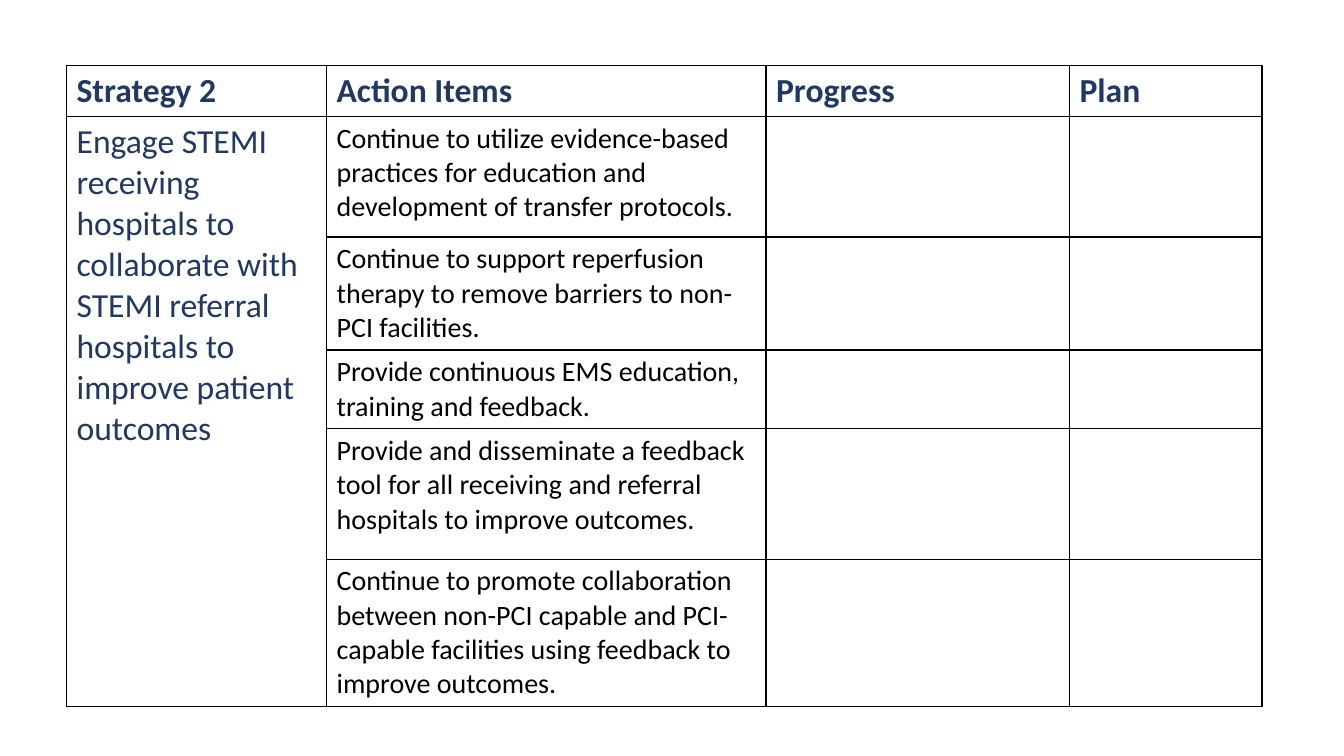
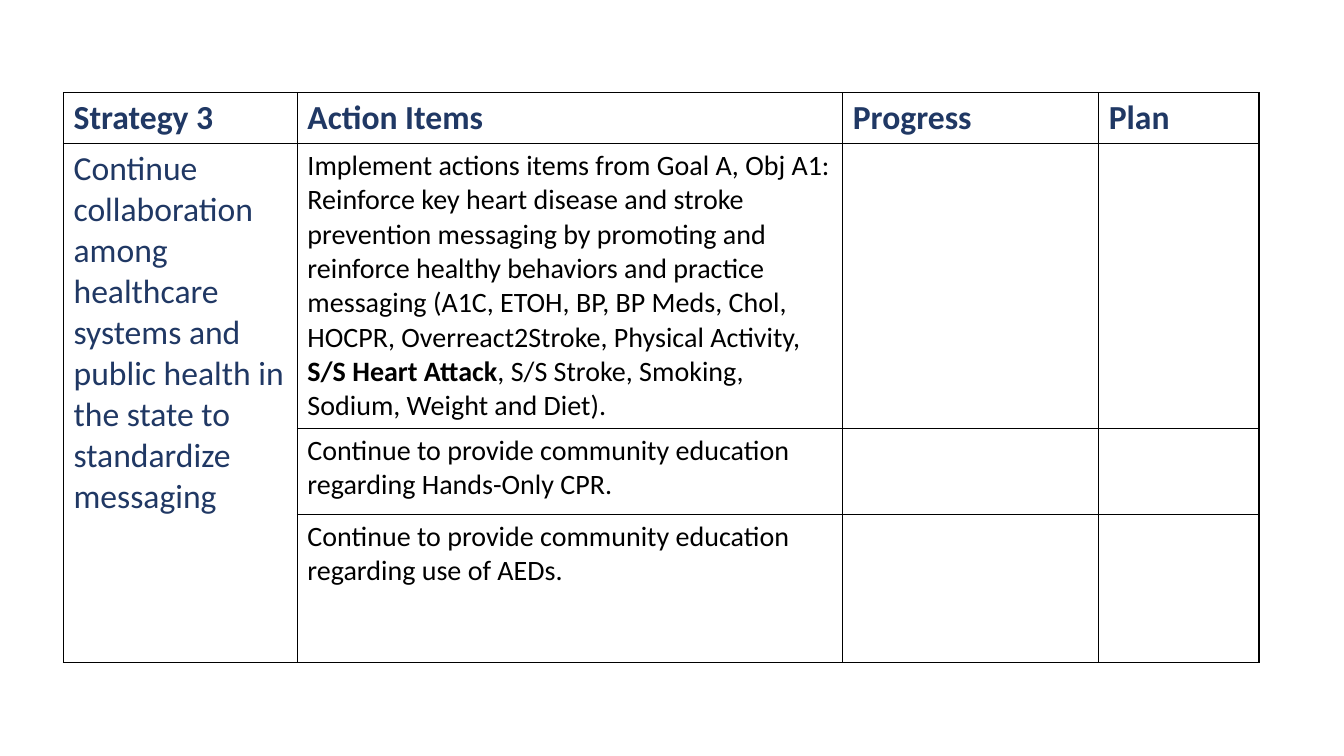
from dataclasses import dataclass

from lxml.etree import SubElement as Sub
from pptx import Presentation
from pptx.dml.color import RGBColor as Rgb
from pptx.oxml.ns import qn
from pptx.util import Inches, Pt

# Content: sizes are percent of the slide's width (left, cols) or height (top, rows)
HEADS = ["Action Items", "Progress", "Plan"]
PLANS = [
    {
        "head": "Strategy 2",
        "goal": "Engage STEMI receiving hospitals to collaborate with STEMI "
                "referral hospitals to improve patient outcomes",
        "left": 4.95, "top": 8.67,
        "cols": [19.35, 32.7, 22.58, 14.33],
        "rows": [6.75, 15.93, 14.95, 10.38, 17.26, 19.51],
        "items": [
            ["Continue to utilize evidence-based practices for education and "
             "development of transfer protocols."],
            ["Continue to support reperfusion therapy to remove barriers to "
             "non-PCI facilities."],
            ["Provide continuous EMS education, training and feedback."],
            ["Provide and disseminate a feedback tool for all receiving and "
             "referral hospitals to improve outcomes."],
            ["Continue to promote collaboration between non-PCI capable and "
             "PCI-capable facilities using feedback to improve outcomes."],
        ],
    },
    {
        "head": "Strategy 3",
        "goal": "Continue collaboration among healthcare systems and public "
                "health in the state to standardize messaging",
        "left": 4.73, "top": 12.27,
        "cols": [17.4, 40.58, 19.05, 11.93],
        "rows": [6.75, 37.63, 11.44, 19.51],
        # Every second run of an item is bold
        "items": [
            ["Implement actions items from Goal A, Obj A1: Reinforce key heart "
             "disease and stroke prevention messaging by promoting and "
             "reinforce healthy behaviors and practice messaging (A1C, ETOH, "
             "BP, BP Meds, Chol, HOCPR, Overreact2Stroke, Physical Activity, ",
             "S/S Heart Attack",
             ", S/S Stroke, Smoking, Sodium, Weight and Diet)."],
            ["Continue to provide community education regarding Hands-Only CPR."],
            ["Continue to provide community education regarding use of AEDs."],
        ],
    },
]


@dataclass(frozen=True)
class Theme:
    font: str = "Calibri"
    navy: str = "203864"
    black: str = "000000"
    white: str = "FFFFFF"
    large: int = 24
    small: int = 20
    rule: float = 1


THEME = Theme()


def write(cell, text, size=THEME.large, color=THEME.navy, bold=False):
    """Add one run of text to the cell."""
    run = cell.text_frame.paragraphs[0].add_run()
    run.text = text
    font = run.font
    font.name, font.size, font.bold = THEME.font, Pt(size), bold
    font.color.rgb = Rgb.from_string(color)


def frame(cell):
    """Rule all four sides of the cell and fill it."""
    props = cell._tc.get_or_add_tcPr()
    for side in ("lnL", "lnR", "lnT", "lnB"):
        line = Sub(props, qn(f"a:{side}"), w=str(Pt(THEME.rule)))
        fill = Sub(line, qn("a:solidFill"))
        Sub(fill, qn("a:srgbClr"), val=THEME.black)
    cell.fill.solid()
    cell.fill.fore_color.rgb = Rgb.from_string(THEME.white)


def build(deck, plan):
    """Add a slide that holds one strategy table."""
    def wide(share):
        return round(deck.slide_width * share / 100)

    def high(share):
        return round(deck.slide_height * share / 100)

    cols, rows = plan["cols"], plan["rows"]
    slide = deck.slides.add_slide(deck.slide_layouts[6])
    table = slide.shapes.add_table(
        len(rows), len(cols), wide(plan["left"]), high(plan["top"]),
        wide(sum(cols)), high(sum(rows))).table
    table.first_row = table.horz_banding = False

    # Grid
    for col, share in zip(table.columns, cols):
        col.width = wide(share)
    for row, share in zip(table.rows, rows):
        row.height = high(share)
    for cell in table.iter_cells():
        frame(cell)

    # Header row
    for x, text in enumerate([plan["head"], *HEADS]):
        write(table.cell(0, x), text, bold=True)

    # Goal spans all action rows
    goal = table.cell(1, 0)
    goal.merge(table.cell(len(rows) - 1, 0))
    write(goal, plan["goal"])

    # Action items
    for y, item in enumerate(plan["items"], 1):
        for n, text in enumerate(item):
            write(table.cell(y, 1), text, size=THEME.small,
                  color=THEME.black, bold=n % 2 == 1)


def main():
    deck = Presentation()
    deck.slide_width, deck.slide_height = Inches(13.33), Inches(7.5)
    for plan in PLANS:
        build(deck, plan)
    deck.save("out.pptx")


if __name__ == "__main__":
    main()
